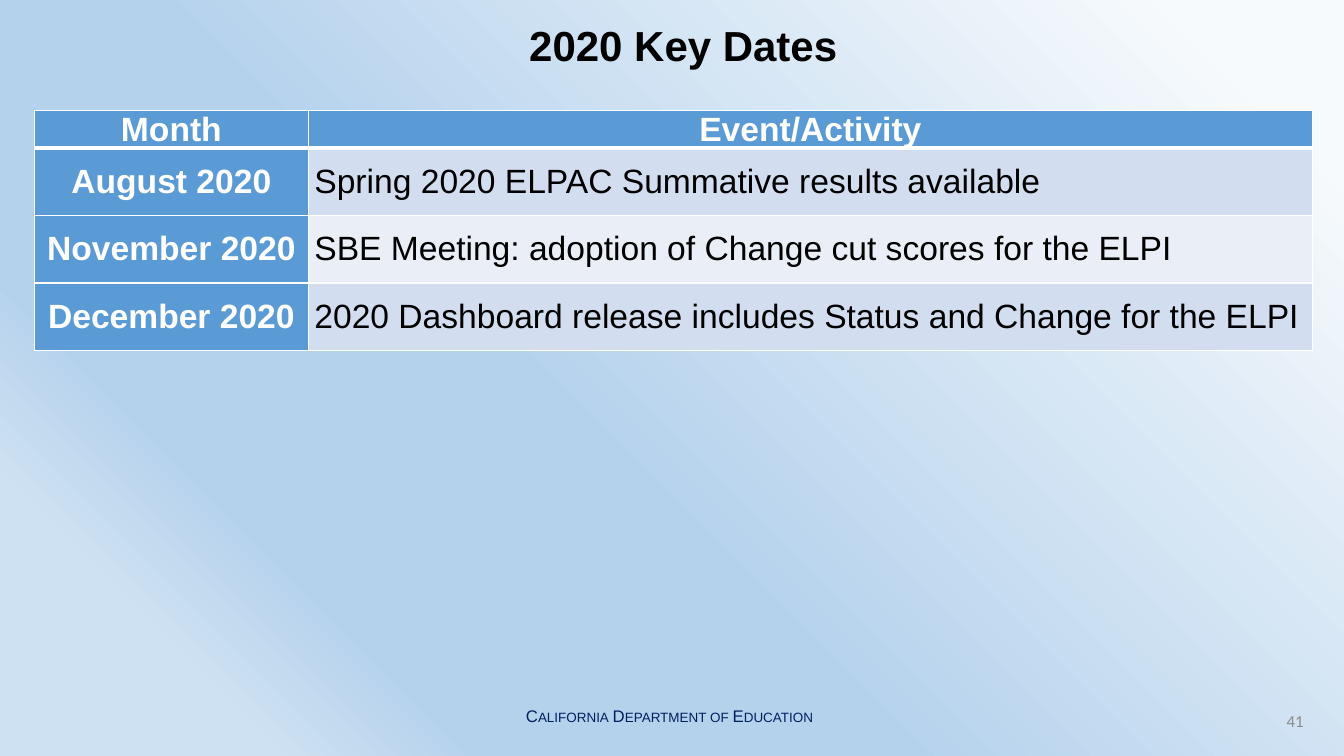
from lxml import etree
from pptx import Presentation
from pptx.dml.color import RGBColor
from pptx.enum.text import MSO_ANCHOR, MSO_AUTO_SIZE, PP_ALIGN
from pptx.oxml.ns import qn
from pptx.util import Pt

LEFT, CENTER, RIGHT = PP_ALIGN.LEFT, PP_ALIGN.CENTER, PP_ALIGN.RIGHT
TOP, MIDDLE = MSO_ANCHOR.TOP, MSO_ANCHOR.MIDDLE
NO_AUTOFIT = MSO_AUTO_SIZE.NONE
TITLE_ONLY = 5

COLORS = {
    "black": "000000", "white": "FFFFFF", "navy": "002060", "gray": "8C8C8C",
    "header": "5B9BD5", "band_dark": "D2DEEF", "band_light": "EAEFF7",
}
BACKGROUND_STOPS = [(8, "F7FAFD"), (57, "B5D2EC"), (77, "B5D2EC"), (87, "CEE1F2")]

KEY_DATES = [
    ("Month", "Event/Activity"),
    ("August 2020", "Spring 2020 ELPAC Summative results available"),
    ("November 2020", "SBE Meeting: adoption of Change cut scores for the ELPI"),
    ("December 2020", "2020 Dashboard release includes Status and Change for the ELPI"),
]
COLUMN_WIDTHS = (195.84, 717.12)
HEADER_HEIGHT, ROW_HEIGHT = 24, 48.2


class SlideBuilder:
    font = "Arial"

    def __init__(self, presentation):
        self.slide = presentation.slides.add_slide(presentation.slide_layouts[TITLE_ONLY])

    def format_text(self, text_frame, size, color, align=LEFT, bold=False, font=None):
        paragraph = text_frame.paragraphs[0]
        paragraph.alignment = align
        run_font = paragraph.runs[0].font
        run_font.name, run_font.size, run_font.bold = font or self.font, Pt(size), bold
        run_font.color.rgb = RGBColor.from_string(COLORS[color])
        return paragraph

    def background(self, stops, angle):
        fill = self.slide.background.fill
        fill.gradient()
        fill.gradient_angle = angle
        stop_list = self.slide.element.find(".//" + qn("a:gsLst"))
        for old_stop in list(stop_list):
            stop_list.remove(old_stop)
        for percent, color in stops:
            stop = etree.SubElement(stop_list, qn("a:gs"), pos=str(percent * 1000))
            etree.SubElement(stop, qn("a:srgbClr"), val=color)

    def title(self, text, left, top, width, height):
        title = self.slide.shapes.title
        title.left, title.top, title.width, title.height = map(Pt, (left, top, width, height))
        text_frame = title.text_frame
        text_frame.text = text
        text_frame.auto_size = NO_AUTOFIT
        text_frame.vertical_anchor = MIDDLE
        self.format_text(text_frame, 30, "black", CENTER, bold=True).line_spacing = 0.9

    def text(self, text, left, top, width, height, color, anchor=TOP,
             align=LEFT, font=None, wrap=True, small_caps=False):
        box = self.slide.shapes.add_textbox(*map(Pt, (left, top, width, height)))
        text_frame = box.text_frame
        text_frame.text = text
        text_frame.word_wrap = wrap
        text_frame.vertical_anchor = anchor
        paragraph = self.format_text(text_frame, 12, color, align, font=font)
        if small_caps:
            paragraph.runs[0].font._element.set("cap", "small")

    def border(self, cell, side, width):
        line = etree.SubElement(cell._tc.get_or_add_tcPr(), qn("a:ln" + side), w=str(Pt(width)))
        fill = etree.SubElement(line, qn("a:solidFill"))
        etree.SubElement(fill, qn("a:srgbClr"), val=COLORS["white"])

    def cell(self, cell, text, row, column):
        is_heading = row == 0 or column == 0
        cell.text = text
        cell.vertical_anchor = MIDDLE
        cell.margin_left = cell.margin_right = Pt(4.3)
        cell.margin_top = cell.margin_bottom = 0
        if is_heading:
            self.format_text(cell.text_frame, 24, "white", CENTER, bold=True)
        else:
            self.format_text(cell.text_frame, 24, "black")
        # A thicker rule separates the header from the body
        for side in "LRTB":
            self.border(cell, side, 3 if (row, side) in ((0, "B"), (1, "T")) else 1)
        band = "band_dark" if row % 2 else "band_light"
        cell.fill.solid()
        cell.fill.fore_color.rgb = RGBColor.from_string(COLORS["header" if is_heading else band])

    def table(self, rows, left, top):
        heights = [HEADER_HEIGHT] + [ROW_HEIGHT] * (len(rows) - 1)
        frame = self.slide.shapes.add_table(
            len(rows), len(COLUMN_WIDTHS), Pt(left), Pt(top),
            Pt(sum(COLUMN_WIDTHS)), Pt(sum(heights)))
        table = frame.table
        table.first_col = True
        for column, width in zip(table.columns, COLUMN_WIDTHS):
            column.width = Pt(width)
        for row_index, (height, texts) in enumerate(zip(heights, rows)):
            table.rows[row_index].height = Pt(height)
            for column_index, text in enumerate(texts):
                self.cell(table.cell(row_index, column_index), text, row_index, column_index)


def main():
    presentation = Presentation()
    presentation.slide_width, presentation.slide_height = Pt(960), Pt(540)
    builder = SlideBuilder(presentation)

    # Background and title
    builder.background(BACKGROUND_STOPS, 225)
    builder.title("2020 Key Dates", 159.8, 15.8, 656.6, 37.4)

    # Key dates
    builder.table(KEY_DATES, 24.5, 79)

    # Footer and slide number
    builder.text("California Department of Education", 368.6, 500.4, 222.5, 21.6,
                 "navy", wrap=False, small_caps=True)
    builder.text("41", 722.2, 500.4, 216, 28.8, "gray", MIDDLE, RIGHT, font="Calibri")

    presentation.save("out.pptx")


if __name__ == "__main__":
    main()
